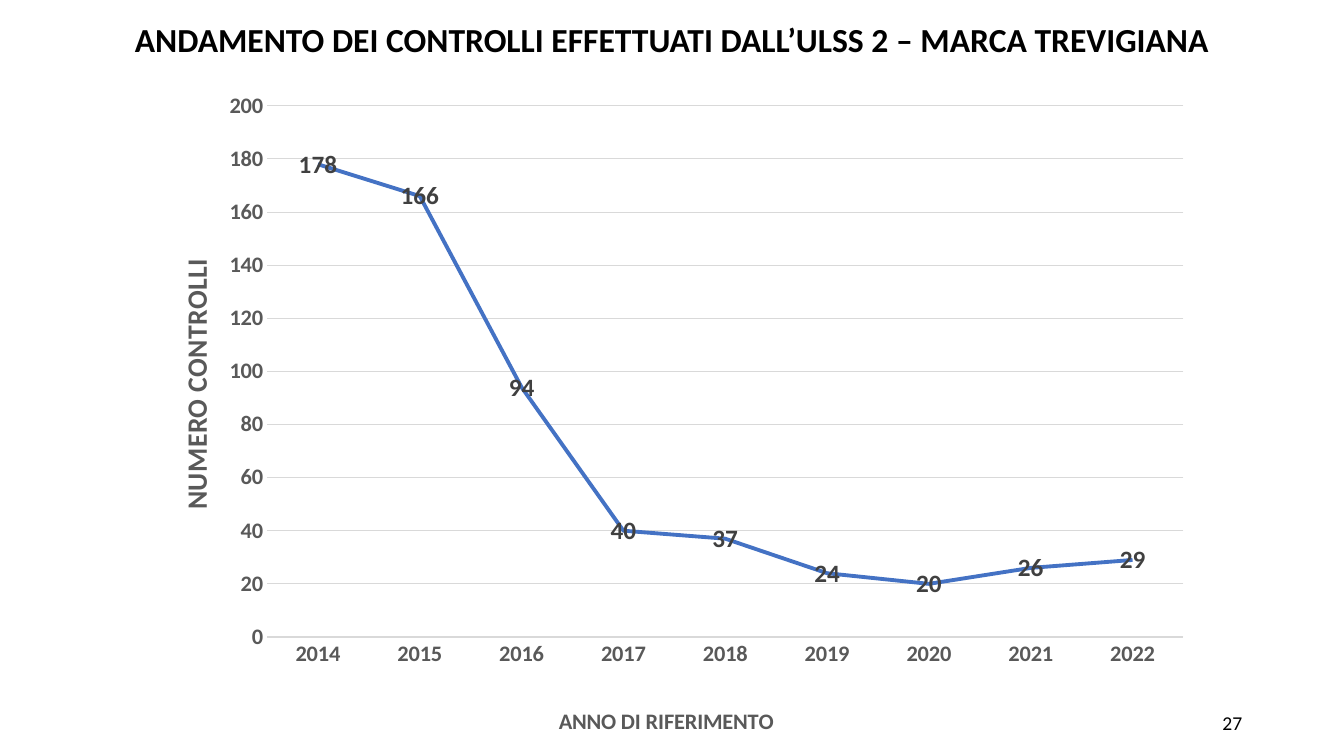
from lxml import etree
from pptx import Presentation
from pptx.chart.data import CategoryChartData
from pptx.dml.color import RGBColor
from pptx.enum.chart import XL_CHART_TYPE, XL_LABEL_POSITION, XL_MARKER_STYLE, XL_TICK_MARK
from pptx.enum.text import MSO_ANCHOR, PP_ALIGN
from pptx.oxml.ns import qn
from pptx.util import Inches, Pt

LINE = XL_CHART_TYPE.LINE
OVER = XL_LABEL_POSITION.CENTER
PLAIN = XL_MARKER_STYLE.NONE
NO_TICK = XL_TICK_MARK.NONE
MIDDLE = MSO_ANCHOR.MIDDLE
CENTER = PP_ALIGN.CENTER
RIGHT = PP_ALIGN.RIGHT

FACE = "Calibri"
BLACK, GRAY, DARK, PALE, BLUE = "000000", "595959", "404040", "D9D9D9", "4472C4"
YEARS = [str(year) for year in range(2014, 2023)]
CHECKS = [178, 166, 94, 40, 37, 24, 20, 26, 29]


def tint(code):
    return RGBColor.from_string(code)


def style(font, size, color, bold=True):
    font.name = FACE
    font.size = Pt(size)
    font.bold = bold
    font.color.rgb = tint(color)


def write(frame, text, size=14, color=BLACK, bold=False, align=None, anchor=None):
    part = frame.paragraphs[0]
    run = part.add_run()
    run.text = text
    style(run.font, size, color, bold)
    if align is not None:
        part.alignment = align
    if anchor is not None:
        frame.vertical_anchor = anchor
        frame.word_wrap = True


def stroke(line, color, width):
    line.color.rgb = tint(color)
    line.width = Pt(width)


def place(node, index, **spots):
    for old in node.findall(qn("c:layout")):
        node.remove(old)
    layout = etree.Element(qn("c:layout"))
    node.insert(index, layout)
    manual = etree.SubElement(layout, qn("c:manualLayout"))
    for key, value in spots.items():
        etree.SubElement(manual, qn("c:" + key), val=str(value))


def name_axis(axis, text, size, x, y, turn=0):
    title = axis.axis_title
    frame = title.text_frame
    write(frame, text, size=size, color=GRAY, bold=True)
    frame._txBody.bodyPr.set("rot", str(turn * 60000))
    place(title._element, 1, xMode="edge", yMode="edge", x=x, y=y)


def add_title(slide, box):
    title = slide.shapes.title
    title.left, title.top, title.width, title.height = map(Inches, box)
    write(title.text_frame, "ANDAMENTO DEI CONTROLLI EFFETTUATI DALL’ULSS 2 – MARCA TREVIGIANA",
          size=24, bold=True, align=CENTER, anchor=MIDDLE)


def add_trend(slide, box):
    data = CategoryChartData()
    data.categories = YEARS
    data.add_series("Controlli", CHECKS)
    chart = slide.shapes.add_chart(LINE, *map(Inches, box), data).chart
    chart.has_legend = False
    chart.has_title = False
    style(chart.font, 10, BLACK, False)

    years, counts = chart.category_axis, chart.value_axis
    for axis in (years, counts):
        axis.major_tick_mark = axis.minor_tick_mark = NO_TICK
        style(axis.tick_labels.font, 16, GRAY)
    stroke(years.format.line, PALE, 1)
    counts.format.line.fill.background()
    stroke(counts.major_gridlines.format.line, PALE, 0.75)
    counts.minimum_scale, counts.maximum_scale, counts.major_unit = 0, 200, 20
    name_axis(years, "ANNO DI RIFERIMENTO", 16, 0.39, 0.95)
    name_axis(counts, "NUMERO CONTROLLI", 20, 0.03, 0.27, -90)

    plot = chart.plots[0]
    plot.vary_by_categories = False
    series = plot.series[0]
    series.smooth = False
    series.marker.style = PLAIN
    stroke(series.format.line, BLUE, 2.75)
    labels = series.data_labels
    labels.show_value = True
    labels.position = OVER
    style(labels.font, 18, DARK)
    place(chart._chartSpace.chart.plotArea, 0, layoutTarget="inner",
          xMode="edge", yMode="edge", x=0.12, y=0.04, w=0.86, h=0.81)


def add_page(slide, box):
    page = slide.shapes.add_textbox(*map(Inches, box))
    write(page.text_frame, "27", align=RIGHT, anchor=MIDDLE)


def main():
    deck = Presentation()
    deck.slide_width, deck.slide_height = Inches(13.33), Inches(7.5)
    slide = deck.slides.add_slide(deck.slide_layouts[5])
    add_title(slide, (0.31, 0.14, 12.71, 0.5))
    add_trend(slide, (1.38, 0.79, 10.57, 6.58))
    add_page(slide, (9.42, 6.97, 3, 0.4))
    deck.save("out.pptx")


if __name__ == "__main__":
    main()
